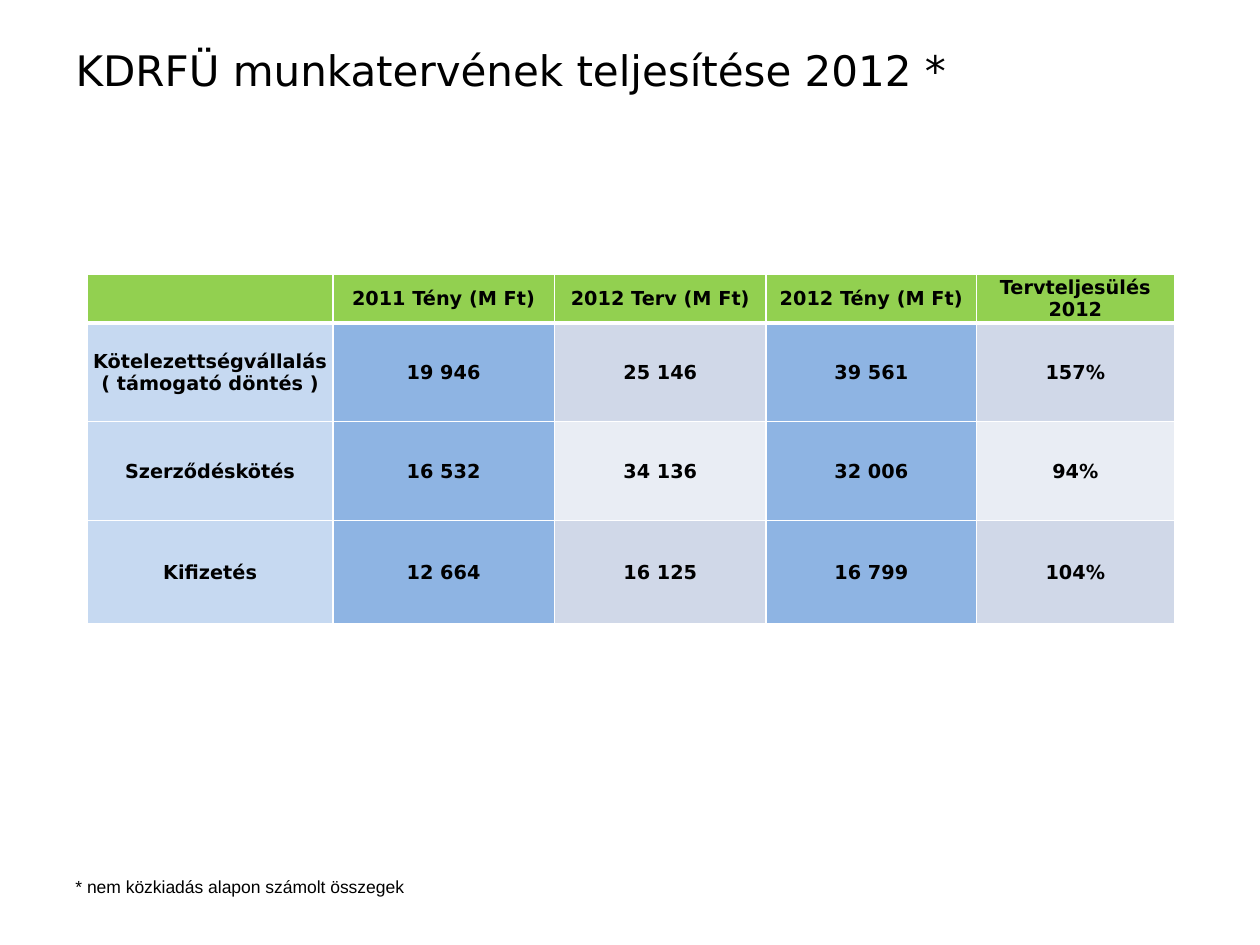
from lxml.etree import SubElement
from pptx import Presentation
from pptx.dml.color import RGBColor
from pptx.enum.text import MSO_ANCHOR, MSO_AUTO_SIZE, PP_ALIGN
from pptx.oxml.ns import qn
from pptx.util import Pt

BLACK = RGBColor(0x00, 0x00, 0x00)
WHITE = RGBColor(0xFF, 0xFF, 0xFF)
GREEN = RGBColor(0x92, 0xD0, 0x50)
LABEL_BLUE = RGBColor(0xC6, 0xD9, 0xF1)
FACT_BLUE = RGBColor(0x8E, 0xB4, 0xE3)
DARK_BAND = RGBColor(0xD0, 0xD8, 0xE8)
LIGHT_BAND = RGBColor(0xE9, 0xED, 0xF4)

TITLE_FORMAT = {"name": "DejaVu Sans", "size": Pt(24), "bold": False}
CELL_FORMAT = {"name": "DejaVu Sans", "size": Pt(11), "bold": True}
NOTE_FORMAT = {"name": "Arial", "size": Pt(10), "bold": False}
CELL_LAYOUT = {
    "margin_left": Pt(0.7), "margin_right": Pt(0.7),
    "margin_top": Pt(0.7), "margin_bottom": 0,
    "vertical_anchor": MSO_ANCHOR.MIDDLE,
}

COLUMN_WIDTHS = [140.2, 126.7, 121, 120.2, 113]
ROW_HEIGHTS = [28, 56.5, 56.5, 59]
RESULTS = [
    ["", "2011 Tény (M Ft)", "2012 Terv (M Ft)", "2012 Tény (M Ft)",
     "Tervteljesülés 2012"],
    ["Kötelezettségvállalás\n( támogató döntés )", "19 946", "25 146",
     "39 561", "157%"],
    ["Szerződéskötés", "16 532", "34 136", "32 006", "94%"],
    ["Kifizetés", "12 664", "16 125", "16 799", "104%"],
]


def apply(target, values):
    for name, value in values.items():
        setattr(target, name, value)


def cell_colour(row, column):
    if row == 0:
        return GREEN
    if column == 0:
        return LABEL_BLUE
    if column in (1, 3):
        return FACT_BLUE
    return DARK_BAND if row % 2 else LIGHT_BAND


class SlideBuilder:
    def __init__(self, page, text_colour, border_colour):
        self.page = page
        self.text_colour = text_colour
        self.border_colour = border_colour

    def add_text(self, frame, text, style, align):
        for index, line in enumerate(text.split("\n")):
            para = frame.add_paragraph() if index else frame.paragraphs[0]
            para.alignment = align
            if line:
                span = para.add_run()
                span.text = line
                apply(span.font, style)
                span.font.color.rgb = self.text_colour

    def title(self, text, left, top, width, height):
        box = self.page.shapes.title
        apply(box, {"left": Pt(left), "top": Pt(top),
                    "width": Pt(width), "height": Pt(height)})
        apply(box.text_frame, {"vertical_anchor": MSO_ANCHOR.TOP,
                               "word_wrap": True,
                               "auto_size": MSO_AUTO_SIZE.NONE})
        self.add_text(box.text_frame, text, TITLE_FORMAT, PP_ALIGN.LEFT)

    def note(self, text, left, top, width, height):
        box = self.page.shapes.add_textbox(
            Pt(left), Pt(top), Pt(width), Pt(height))
        apply(box.text_frame, {"word_wrap": True,
                               "auto_size": MSO_AUTO_SIZE.SHAPE_TO_FIT_TEXT})
        self.add_text(box.text_frame, text, NOTE_FORMAT, PP_ALIGN.LEFT)

    def borders(self, cell, bottom_width):
        properties = cell._tc.get_or_add_tcPr()
        for side in "LRTB":
            width = bottom_width if side == "B" else 1
            line = SubElement(properties, qn(f"a:ln{side}"), w=str(Pt(width)))
            fill = SubElement(line, qn("a:solidFill"))
            SubElement(fill, qn("a:srgbClr"), val=str(self.border_colour))

    def table(self, rows, left, top, widths, heights):
        table = self.page.shapes.add_table(
            len(rows), len(widths), Pt(left), Pt(top),
            Pt(sum(widths)), Pt(sum(heights))).table
        for column, width in zip(table.columns, widths):
            column.width = Pt(width)
        for row, height in zip(table.rows, heights):
            row.height = Pt(height)
        for row, texts in enumerate(rows):
            for column, text in enumerate(texts):
                cell = table.cell(row, column)
                apply(cell, CELL_LAYOUT)
                self.borders(cell, 1 if row else 3)
                cell.fill.solid()
                cell.fill.fore_color.rgb = cell_colour(row, column)
                self.add_text(cell.text_frame, text, CELL_FORMAT,
                              PP_ALIGN.CENTER)


def main():
    deck = Presentation()
    deck.slide_width, deck.slide_height = Pt(720), Pt(540)
    page = deck.slides.add_slide(deck.slide_layouts.get_by_name("Title Only"))
    builder = SlideBuilder(page, BLACK, WHITE)
    builder.title("KDRFÜ munkatervének teljesítése 2012 *", 36, 21.6, 648, 90)
    builder.table(RESULTS, 50, 156.5, COLUMN_WIDTHS, ROW_HEIGHTS)
    builder.note("* nem közkiadás alapon számolt összegek",
                 36, 497, 283.5, 19.4)
    deck.save("out.pptx")


if __name__ == "__main__":
    main()
